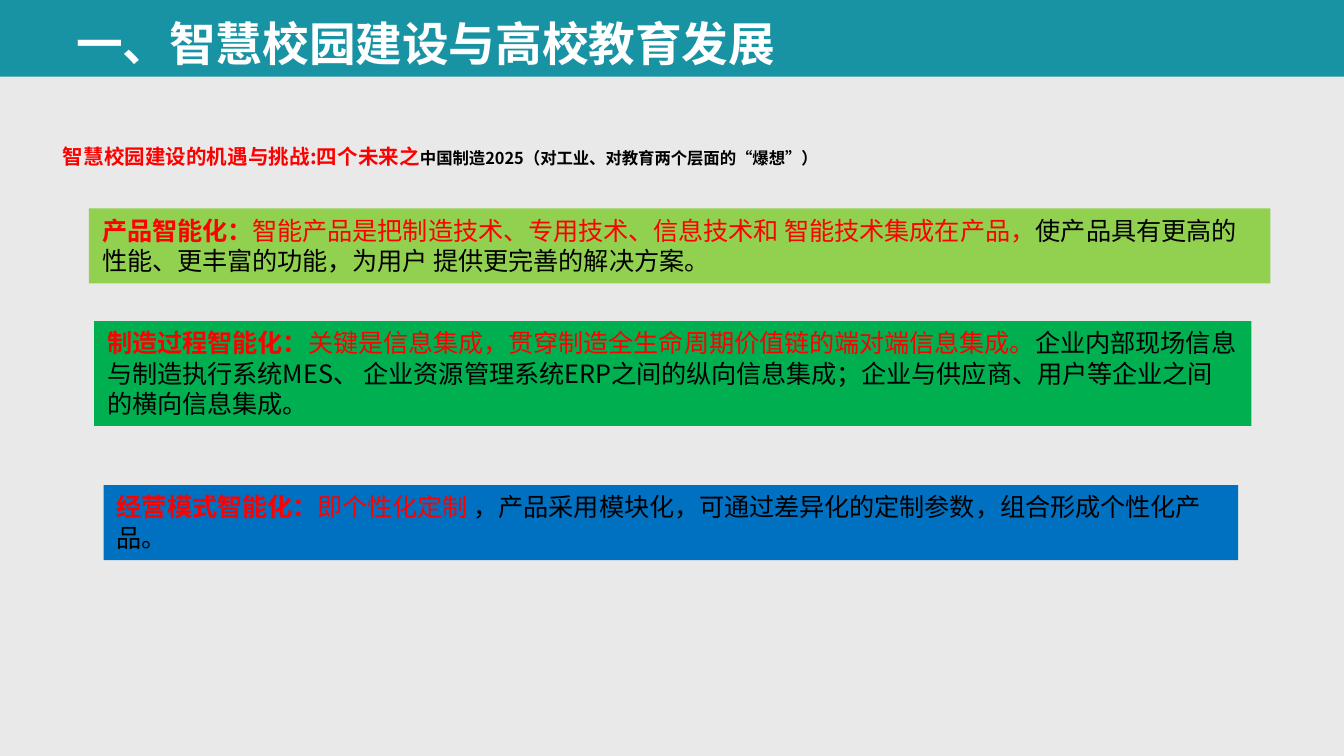
from lxml.etree import SubElement
from pptx import Presentation
from pptx.dml.color import RGBColor as Rgb
from pptx.enum.shapes import MSO_SHAPE as Kind
from pptx.enum.text import MSO_ANCHOR as Anchor, PP_ALIGN as Align
from pptx.oxml.ns import qn
from pptx.util import Cm, Pt

GRAY = Rgb(0xE9, 0xE9, 0xE9)
TEAL = Rgb(0x18, 0x93, 0xA4)
LIME = Rgb(0x92, 0xD0, 0x50)
GREEN = Rgb(0x00, 0xB0, 0x50)
BLUE = Rgb(0x00, 0x70, 0xC0)
RED = Rgb(0xFF, 0x00, 0x00)
WHITE = Rgb(0xFF, 0xFF, 0xFF)
BLACK = Rgb(0x00, 0x00, 0x00)

CARDS = [
    (LIME, 1.68, 3.94, 22.33, 1.42, "产品智能化：",
     "智能产品是把制造技术、专用技术、信息技术和 智能技术集成在产品，",
     "使产品具有更高的性能、更丰富的功能，为用户 提供更完善的解决方案。"),
    (GREEN, 1.78, 6.07, 21.87, 1.98, "制造过程智能化：",
     "关键是信息集成，贯穿制造全生命周期价值链的端对端信息集成。",
     "企业内部现场信息与制造执行系统MES、 企业资源管理系统ERP之间的纵向信息集成；"
     "企业与供应商、用户等企业之间的横向信息集成。"),
    (BLUE, 1.96, 9.17, 21.44, 1.42, "经营模式智能化：", "即个性化定制 ",
     "，产品采用模块化，可通过差异化的定制参数，组合形成个性化产品。"),
]


class Deck:
    face = "Noto Sans CJK SC"

    def __init__(self):
        self.show = Presentation()
        self.show.slide_width, self.show.slide_height = Cm(25.4), Cm(14.29)
        self.slide = self.show.slides.add_slide(self.show.slide_layouts[6])
        back = self.slide.background.fill
        back.solid()
        back.fore_color.rgb = GRAY

    def bar(self, color, *box):
        bar = self.slide.shapes.add_shape(Kind.RECTANGLE, *map(Cm, box))
        bar.shadow.inherit = False
        bar.fill.solid()
        bar.fill.fore_color.rgb = color
        bar.line.fill.background()
        return bar

    def words(self, shape, pitch, runs):
        frame = shape.text_frame
        frame.word_wrap = True
        frame.vertical_anchor = Anchor.TOP
        para = frame.paragraphs[0]
        para.alignment = Align.LEFT
        para.line_spacing = Pt(pitch)
        para.font.name = self.face
        base = para._p.get_or_add_pPr().get_or_add_defRPr()
        SubElement(base, qn("a:ea"), typeface=self.face)
        for text, size, color, bold in runs:
            run = para.add_run()
            run.text = text
            run.font.size = Pt(size)
            run.font.bold = bold
            run.font.color.rgb = color

    def label(self, box, runs):
        self.words(self.slide.shapes.add_textbox(*map(Cm, box)), 30, runs)

    def card(self, color, left, top, width, height, head, key, rest):
        shape = self.bar(color, left, top, width, height)
        self.words(shape, 16.2, [(head, 13.5, RED, True),
                                 (key, 13.5, RED, False),
                                 (rest, 13.5, BLACK, False)])


def main():
    deck = Deck()
    deck.bar(TEAL, 0, 0, 25.4, 1.45)
    deck.label((1.19, 0.15, 22.86, 1.27),
               [("一、智慧校园建设与高校教育发展", 25, WHITE, True)])
    deck.label((0.94, 2.01, 16.51, 1.42),
               [("智慧校园建设的机遇与挑战:四个未来之", 11, RED, True),
                ("中国制造2025（对工业、对教育两个层面的“爆想”）", 8.8, BLACK, True)])
    for card in CARDS:
        deck.card(*card)
    deck.show.save("out.pptx")


if __name__ == "__main__":
    main()
